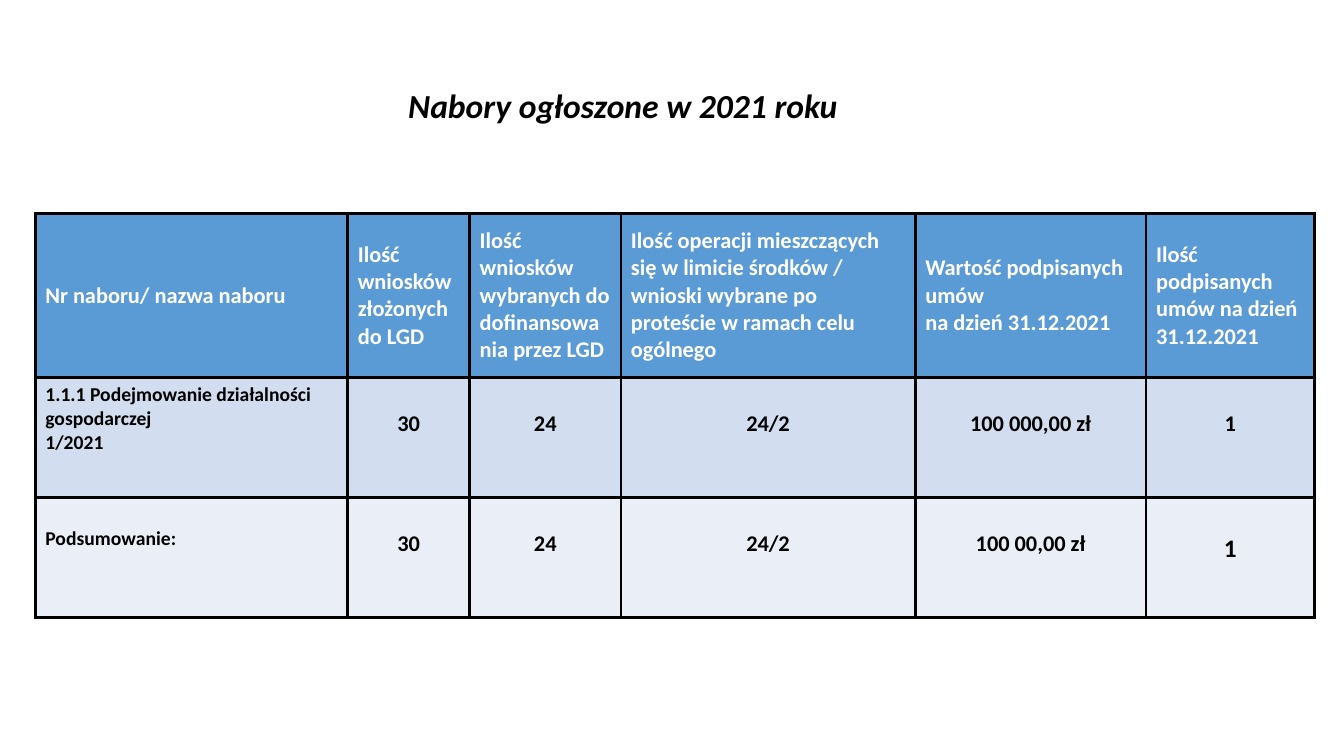
from lxml.etree import SubElement
from pptx import Presentation
from pptx.dml.color import RGBColor
from pptx.enum.text import MSO_ANCHOR, MSO_AUTO_SIZE, PP_ALIGN
from pptx.oxml.ns import qn
from pptx.util import Pt

TITLE = "Nabory ogłoszone w 2021 roku"
ROWS = [
    ["Nr naboru/ nazwa naboru",
     "Ilość wniosków złożonych do LGD",
     "Ilość wniosków wybranych do dofinansowania przez LGD",
     "Ilość operacji mieszczących się w limicie środków / wnioski wybrane po proteście w ramach celu ogólnego",
     "Wartość podpisanych umów\nna dzień 31.12.2021",
     "Ilość podpisanych umów na dzień 31.12.2021"],
    ["1.1.1 Podejmowanie działalności gospodarczej\v1/2021",
     "30", "24", "24/2", "100 000,00 zł", "1"],
    ["Podsumowanie:", "30", "24", "24/2", "100 00,00 zł", "1"],
]
WIDTHS = [223.2, 87.1, 108, 210.3, 164.9, 120.2]
HEIGHTS = [117.4, 85.7, 85.7]
SIZES = [[16] * 6, [14] + [16] * 5, [14] + [16] * 4 + [18]]

BLACK = RGBColor(0x00, 0x00, 0x00)
WHITE = RGBColor(0xFF, 0xFF, 0xFF)
BLUE = RGBColor(0x5B, 0x9B, 0xD5)
FILLS = [BLUE, RGBColor(0xD2, 0xDE, 0xEF), RGBColor(0xEA, 0xEF, 0xF7)]
PAD = 3.6
LEAD = 1.22


def write(frame, text, size=16, color=BLACK, align=PP_ALIGN.LEFT, slant=False, lead=1.0):
    frame.text = text
    for para in frame.paragraphs:
        para.alignment = align
        para.line_spacing = lead
        for run in para.runs:
            font = run.font
            font.name = "Calibri"
            font.size = Pt(size)
            font.bold = True
            font.italic = slant
            font.color.rgb = color


def edge(cell):
    props = cell._tc.get_or_add_tcPr()
    for side in ("a:lnL", "a:lnR", "a:lnT", "a:lnB"):
        line = SubElement(props, qn(side), w=str(Pt(2.25)))
        fill = SubElement(line, qn("a:solidFill"))
        SubElement(fill, qn("a:srgbClr"), val=str(BLACK))


def main():
    deck = Presentation()
    deck.slide_width, deck.slide_height = Pt(960), Pt(540)
    slide = deck.slides.add_slide(deck.slide_layouts[5])

    title = slide.shapes.title
    title.left, title.top, title.width, title.height = Pt(43.2), Pt(0), Pt(803.5), Pt(93.6)
    frame = title.text_frame
    frame.auto_size = MSO_AUTO_SIZE.NONE
    frame.vertical_anchor = MSO_ANCHOR.BOTTOM
    write(frame, TITLE, size=24, align=PP_ALIGN.CENTER, slant=True, lead=0.9)

    table = slide.shapes.add_table(
        len(ROWS), len(WIDTHS), Pt(25.2), Pt(152.4),
        Pt(sum(WIDTHS)), Pt(sum(HEIGHTS))).table
    for col, width in zip(table.columns, WIDTHS):
        col.width = Pt(width)
    for row, height in zip(table.rows, HEIGHTS):
        row.height = Pt(height)

    for r, row in enumerate(ROWS):
        for c, text in enumerate(row):
            cell, size = table.cell(r, c), SIZES[r][c]
            head = r == 0
            write(cell.text_frame, text, size=size,
                  color=WHITE if head else BLACK,
                  align=PP_ALIGN.LEFT if head or c == 0 else PP_ALIGN.CENTER)
            cell.vertical_anchor = MSO_ANCHOR.MIDDLE if head else MSO_ANCHOR.TOP
            drop = not head and (r, c) != (1, 0)
            cell.margin_top = Pt(PAD + LEAD * size * drop)
            edge(cell)
            cell.fill.solid()
            cell.fill.fore_color.rgb = FILLS[r]

    deck.save("out.pptx")


if __name__ == "__main__":
    main()
